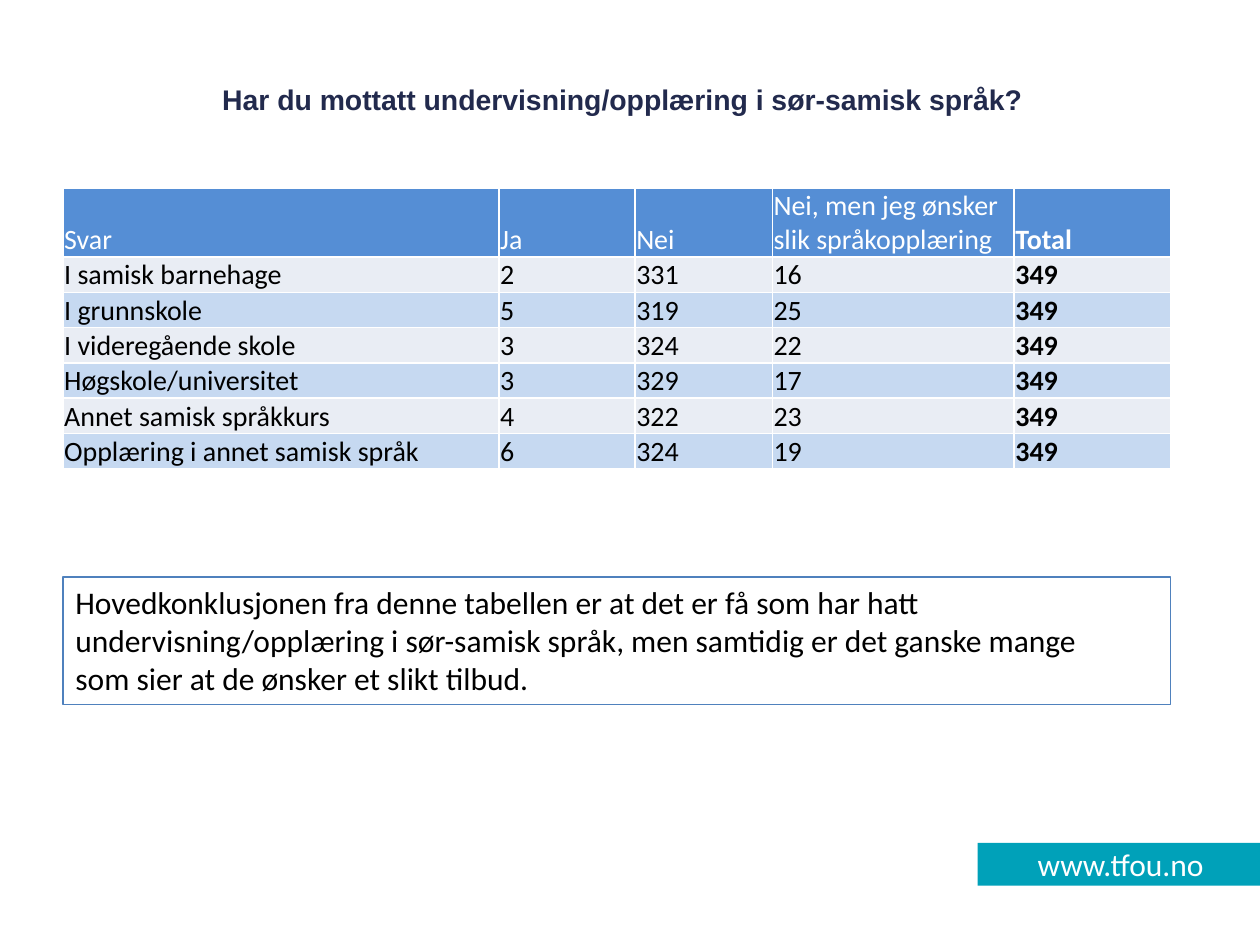
import pptx
import pptx.util
import pptx.dml.color
import pptx.enum.shapes
import pptx.enum.text
import pptx.oxml
import pptx.oxml.ns
from pptx.util import Inches

ANCHOR = pptx.enum.text.MSO_ANCHOR
ALIGN = pptx.enum.text.PP_ALIGN


def color(hex_value):
    return pptx.dml.color.RGBColor.from_string(hex_value)


class SlideBuilder:
    FONT = "Calibri"
    WHITE, BLACK, NAVY = "FFFFFF", "000000", "222A4D"
    TEAL, OUTLINE = "00A1B9", "4F81BD"
    HEADER, BANDS = "558ED5", ("E9EDF4", "C6D9F1")

    def __init__(self, slide):
        self.slide = slide

    def set_text(self, frame, lines, size, text_color, bold=False, font=FONT, align=ALIGN.LEFT):
        for index, line in enumerate(lines):
            paragraph = frame.paragraphs[0] if index == 0 else frame.add_paragraph()
            paragraph.text = line
            paragraph.alignment = align
            paragraph.font.name = font
            paragraph.font.size = pptx.util.Pt(size)
            paragraph.font.bold = bold
            paragraph.font.color.rgb = color(text_color)

    def title(self, text, left, top, width, height):
        frame = self.slide.shapes.add_textbox(
            Inches(left), Inches(top), Inches(width), Inches(height)).text_frame
        frame.word_wrap = True
        frame.vertical_anchor = ANCHOR.TOP
        frame.margin_top = Inches(0.34)
        frame.margin_right = Inches(0.22)
        self.set_text(frame, [text], 16.2, self.NAVY, True, "Arial", ALIGN.CENTER)

    def box(self, lines, left, top, width, height, text_color,
            fill=None, line=None, anchor=ANCHOR.TOP, align=ALIGN.LEFT):
        shape = self.slide.shapes.add_shape(
            pptx.enum.shapes.MSO_SHAPE.RECTANGLE,
            Inches(left), Inches(top), Inches(width), Inches(height))
        shape.shadow.inherit = False
        if fill:
            shape.fill.solid()
            shape.fill.fore_color.rgb = color(fill)
        else:
            shape.fill.background()
        if line:
            shape.line.color.rgb = color(line)
            shape.line.width = pptx.util.Pt(0.75)
        else:
            shape.line.fill.background()
        frame = shape.text_frame
        frame.word_wrap = True
        frame.vertical_anchor = anchor
        self.set_text(frame, lines, 18, text_color, align=align)

    def cell_borders(self, cell):
        properties = cell._tc.get_or_add_tcPr()
        for position, side in enumerate(("lnL", "lnR", "lnT", "lnB")):
            properties.insert(position, pptx.oxml.parse_xml(
                f'<a:{side} {pptx.oxml.ns.nsdecls("a")} w="12700"><a:solidFill>'
                f'<a:srgbClr val="{self.WHITE}"/></a:solidFill></a:{side}>'))

    def table(self, rows, left, top, widths, heights):
        table = self.slide.shapes.add_table(
            len(rows), len(widths), Inches(left), Inches(top),
            Inches(sum(widths)), Inches(sum(heights))).table
        for column, width in zip(table.columns, widths):
            column.width = Inches(width)
        for r, (values, height) in enumerate(zip(rows, heights)):
            table.rows[r].height = Inches(height)
            is_header = r == 0
            for c, value in enumerate(values):
                cell = table.cell(r, c)
                cell.margin_left = cell.margin_right = cell.margin_top = Inches(0.01)
                cell.margin_bottom = 0
                cell.vertical_anchor = ANCHOR.BOTTOM
                cell.fill.solid()
                cell.fill.fore_color.rgb = color(
                    self.HEADER if is_header else self.BANDS[(r - 1) % 2])
                self.cell_borders(cell)
                self.set_text(cell.text_frame, [str(value)], 16,
                              self.WHITE if is_header else self.BLACK,
                              bold=c == len(values) - 1)


def main():
    presentation = pptx.Presentation()
    presentation.slide_width = Inches(10)
    presentation.slide_height = Inches(7.5)
    builder = SlideBuilder(presentation.slides.add_slide(presentation.slide_layouts[6]))

    # Web address banner
    builder.box(["www.tfou.no"], 7.76, 6.69, 2.27, 0.34, builder.WHITE,
                fill=builder.TEAL, anchor=ANCHOR.MIDDLE, align=ALIGN.CENTER)

    # Question
    builder.title("Har du mottatt undervisning/opplæring i sør-samisk språk?",
                  0.5, 0.31, 9, 1.25)

    # Answers per type of education
    answers = [
        ("Svar", "Ja", "Nei", "Nei, men jeg ønsker slik språkopplæring", "Total"),
        ("I samisk barnehage", 2, 331, 16, 349),
        ("I grunnskole", 5, 319, 25, 349),
        ("I videregående skole", 3, 324, 22, 349),
        ("Høgskole/universitet", 3, 329, 17, 349),
        ("Annet samisk språkkurs", 4, 322, 23, 349),
        ("Opplæring i annet samisk språk", 6, 324, 19, 349),
    ]
    builder.table(answers, 0.5, 1.49, [3.46, 1.08, 1.09, 1.92, 1.24],
                  [0.55] + [0.28] * (len(answers) - 1))

    # Conclusion
    builder.box(["Hovedkonklusjonen fra denne tabellen er at det er få som har hatt",
                 "undervisning/opplæring i sør-samisk språk, men samtidig er det ganske mange",
                 "som sier at de ønsker et slikt tilbud."],
                0.5, 4.58, 8.79, 1.01, builder.BLACK, line=builder.OUTLINE)

    presentation.save("out.pptx")


if __name__ == "__main__":
    main()
